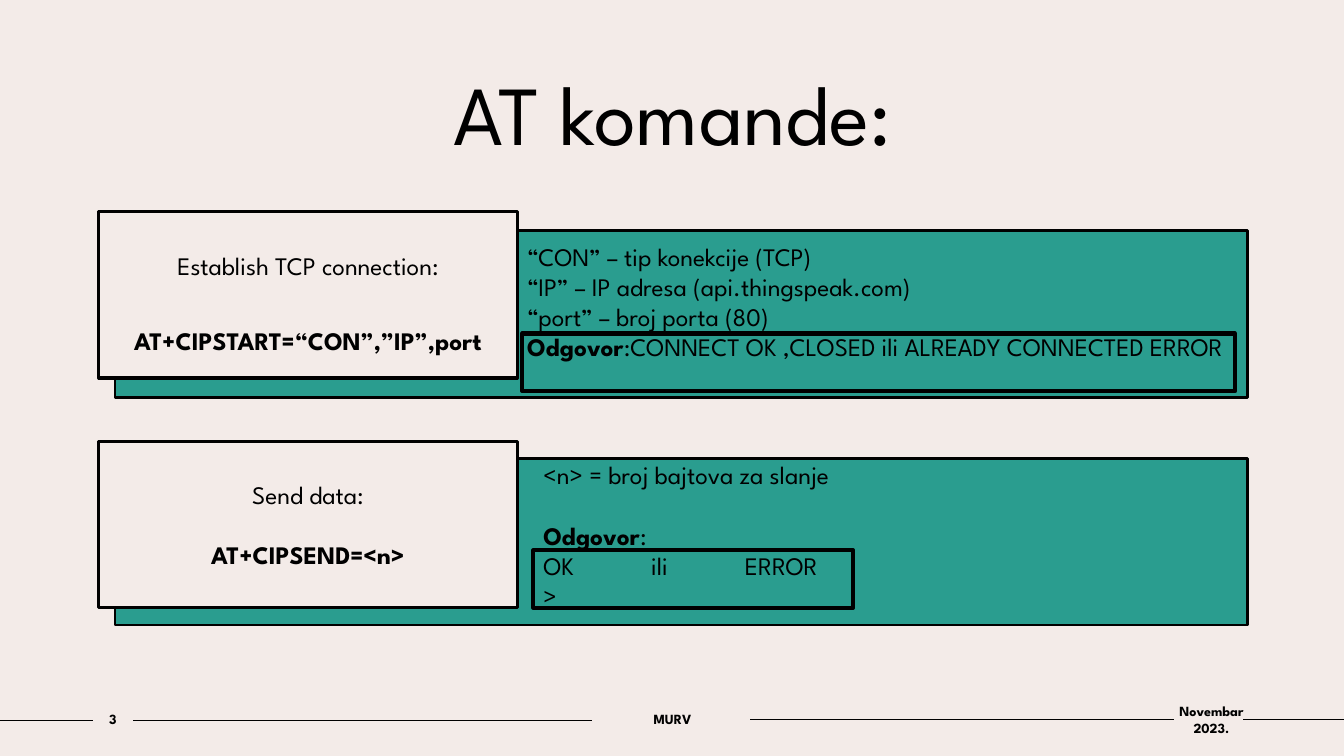
from pptx import Presentation
from pptx import util as u
from pptx.dml.color import RGBColor
from pptx.enum import shapes, text
from pptx.oxml.ns import qn
from lxml import etree

COLORS = {"paper": "F3EBE8", "teal": "2A9D8F", "ink": "000000"}
FONT = "League Spartan"
LEFT, MID = text.PP_ALIGN.LEFT, text.PP_ALIGN.CENTER
TOP, CORE = text.MSO_ANCHOR.TOP, text.MSO_ANCHOR.MIDDLE


def color(name):
    return RGBColor.from_string(COLORS[name])


def write(shape, rows, size, align=MID, anchor=CORE, side=0.1, top=0.05):
    frame = shape.text_frame
    frame.word_wrap = True
    frame.vertical_anchor = anchor
    frame.margin_left = frame.margin_right = u.Inches(side)
    frame.margin_top, frame.margin_bottom = u.Inches(top), u.Inches(0.05)
    for i, (gap, runs) in enumerate(rows):
        para = frame.paragraphs[0] if i == 0 else frame.add_paragraph()
        para.alignment = align
        if gap:
            para.space_before = u.Pt(gap)
        if any("\t" in words for words, _ in runs):
            tabs = etree.SubElement(para._p.get_or_add_pPr(), qn("a:tabLst"))
            for stop in (1.07, 2):
                etree.SubElement(tabs, qn("a:tab"), pos=str(u.Inches(stop)), algn="l")
        for words, bold in runs:
            run = para.add_run()
            run.text = words
            run.font.name = FONT
            run.font.size = u.Pt(size)
            run.font.bold = bold
            run.font.color.rgb = color("ink")


def label(slide, box, rows, size, **style):
    write(slide.shapes.add_textbox(*map(u.Inches, box)), rows, size, **style)


def panel(slide, box, fill, width):
    rect = slide.shapes.add_shape(shapes.MSO_SHAPE.RECTANGLE, *map(u.Inches, box))
    rect.shadow.inherit = False
    if fill:
        rect.fill.solid()
        rect.fill.fore_color.rgb = color(fill)
    else:
        rect.fill.background()
    rect.line.color.rgb = color("ink")
    rect.line.width = u.Pt(width)
    return rect


def rule(slide, start, end, y):
    line = slide.shapes.add_connector(
        shapes.MSO_CONNECTOR.STRAIGHT, *map(u.Inches, (start, y, end, y)))
    line.line.color.rgb = color("ink")
    line.line.width = u.Pt(1)
    etree.SubElement(line._element.spPr, qn("a:effectLst"))


def command(slide, box, drop, card, inset, note, answer, frame):
    x, y, width, height = box
    panel(slide, (x + 0.16, y + drop, width - 0.16, height), "teal", 2)
    write(panel(slide, (x, y, 4.15, height), "paper", 2.25), card, 18, top=inset)
    dx, dy, wide = note
    label(slide, (x + dx, y + dy, wide, 1.6), answer, 18, align=LEFT, anchor=TOP)
    dx, dy, wide = frame
    panel(slide, (x + dx, y + dy, wide, 0.57), None, 3)


def footer(slide, y):
    for start, end, lift in ((0, 0.92, 0.15), (1.32, 5.87, 0.15),
                             (7.44, 11.64, 0.14), (12.33, 13.33, 0.14)):
        rule(slide, start, end, y + lift)
    for x, width, lines in ((0.92, 0.4, ["3"]), (5.87, 1.6, ["MURV"]),
                            (11.62, 0.79, ["Novembar", "2023."])):
        rows = [(0, [(line, True)]) for line in lines]
        label(slide, (x, y, width, 0.27), rows, 10, side=0)


def main():
    deck = Presentation()
    deck.slide_width, deck.slide_height = u.Inches(13.33), u.Inches(7.5)
    slide = deck.slides.add_slide(deck.slide_layouts[6])
    slide.background.fill.solid()
    slide.background.fill.fore_color.rgb = color("paper")

    footer(slide, 7)
    label(slide, (1.25, 0.56, 10.84, 1.11),
          [(0, [("AT komande:", False)])], 60, anchor=TOP)
    command(
        slide, (0.98, 2.1, 11.39, 1.65), 0.19,
        [(0, [("Establish TCP connection:", False)]),
         (32, [("AT+CIPSTART=“CON”,”IP”,port", True)])], 0.21,
        (4.15, 0.24, 7.23),
        [(0, [("“CON” – tip konekcije (TCP)", False)]),
         (0, [("“IP” – IP adresa (api.thingspeak.com)", False)]),
         (0, [("“port” – broj porta (80)", False)]),
         (0, [("Odgovor", True),
              (":CONNECT OK ,CLOSED ili ALREADY CONNECTED ERROR", False)])],
        (4.2, 1.21, 7.07))
    command(
        slide, (0.98, 4.38, 11.39, 1.65), 0.17,
        [(0, [("Send data:", False)]),
         (21.6, [("AT+CIPSEND=<n>", True)])], 0.05,
        (4.31, 0.13, 3.92),
        [(0, [("<n> = broj bajtova za slanje", False)]),
         (21.6, [("Odgovor", True), (":", False)]),
         (0, [("OK\tili\tERROR", False)]),
         (0, [(">", False)])],
        (4.31, 1.08, 3.17))
    deck.save("out.pptx")


if __name__ == "__main__":
    main()
